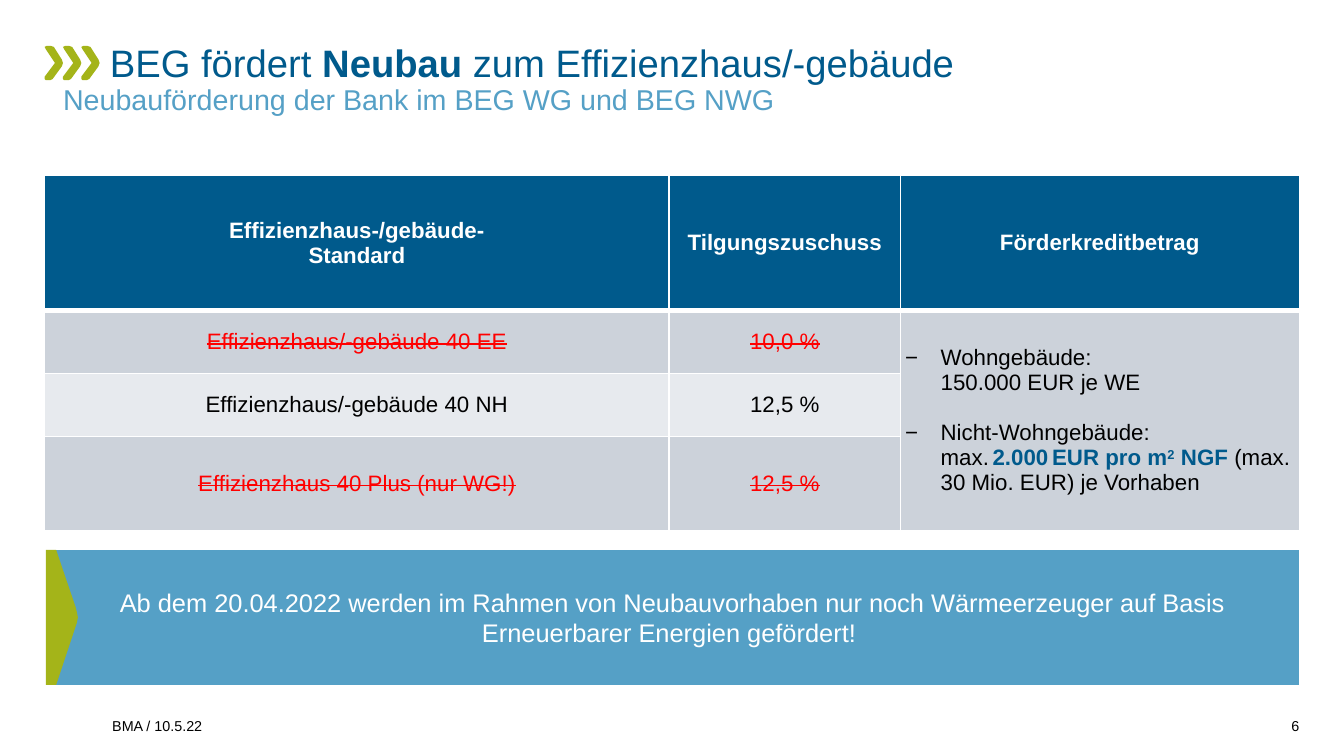
from lxml import etree
from pptx import Presentation
from pptx.dml.color import RGBColor
from pptx.enum.text import MSO_ANCHOR, PP_ALIGN
from pptx.oxml.ns import qn
from pptx.util import Inches, Pt

LEFT, CENTER, RIGHT = PP_ALIGN.LEFT, PP_ALIGN.CENTER, PP_ALIGN.RIGHT
TOP, MIDDLE, BOTTOM = MSO_ANCHOR.TOP, MSO_ANCHOR.MIDDLE, MSO_ANCHOR.BOTTOM

COLORS = {"navy": "005A8C", "sky": "55A0C6", "lime": "A4B419", "white": "FFFFFF",
          "black": "000000", "red": "FF0000", "band": "CCD2DA", "pale": "E7EAEE"}
FONT = "Arial"

# Content: a paragraph is a list of (text, format) runs
TITLE = [("BEG fördert ", {}), ("Neubau ", {"bold": True}), ("zum Effizienzhaus/-gebäude", {})]
SUBTITLE = "Neubauförderung der Bank im BEG WG und BEG NWG"
HEADINGS = ["Effizienzhaus-/gebäude-\nStandard", "Tilgungszuschuss", "Förderkreditbetrag"]
STANDARDS = [  # standard, repayment grant, discontinued
    ("Effizienzhaus/-gebäude 40 EE", "10,0 %", True),
    ("Effizienzhaus/-gebäude 40 NH", "12,5 %", False),
    ("Effizienzhaus 40 Plus (nur WG!)", "12,5 %", True),
]
ACCENT = {"color": "navy", "bold": True}
THIN = {"size": 8}
LOANS = [
    [("Wohngebäude:\n150.000 EUR je WE", {})],
    [("Nicht-Wohngebäude:\nmax.", {}), (" ", THIN), ("2.000", ACCENT), (" ", THIN),
     ("EUR pro m", ACCENT), ("2", {**ACCENT, "raised": True}), (" NGF ", ACCENT),
     ("(max. 30 Mio. EUR) je Vorhaben", {})],
]
NOTICE = ("Ab dem 20.04.2022 werden im Rahmen von Neubauvorhaben nur noch Wärmeerzeuger "
          "auf Basis Erneuerbarer Energien gefördert! ")
FOOTER, PAGE = "BMA / 10.5.22", "6"

# Layout in inches
WIDTH, HEIGHT = 11.73, 6.6
MARGIN = 0.39
CONTENT_W = WIDTH - 2 * MARGIN
COLUMNS = [5.45, 2.02, 3.48]
ROWS = [1.18, 0.55, 0.55, 0.82]
TABLE_TOP, NOTICE_TOP, FOOTER_TOP = 1.53, 4.8, 6.13
HEAD_LEFT, HEAD_W = 0.55, 10.79
CHEVRON_STEP = 0.16

# Outlines in hundredths of an inch
CHEVRON = [(2, 0), (0, 1), (1, 3), (9, 15), (0, 27), (0, 29), (1, 30), (5, 30),
           (7, 29), (15, 18), (16, 15), (15, 12), (8, 1), (5, 0)]
NOTICE_BOX = [(0, 0), (1094, 0), (1094, 118), (0, 118)]
NOTICE_TIP = [(0, 0), (9, 0), (26, 50), (27, 54), (28, 59), (27, 64), (26, 67),
              (9, 118), (0, 118)]


def rgb(name):
    return RGBColor.from_string(COLORS[name])


def put_text(frame, content, size=14, color="black", bold=False, strike=False, align=LEFT,
             spacing=None, gap=0, first_indent=0, hanging=0, bullet=None):
    """Fill a frame with a string or with paragraphs made of formatted runs."""
    paragraphs = [[(content, {})]] if isinstance(content, str) else content
    for number, runs in enumerate(paragraphs):
        para = frame.add_paragraph() if number else frame.paragraphs[0]
        para.alignment = align
        if spacing:
            para.line_spacing = spacing
        if number and gap:
            para.space_before = Pt(gap)
        props = para._p.get_or_add_pPr()
        if first_indent or hanging:
            props.set("marL", str(Inches(hanging)))
            props.set("indent", str(Inches(first_indent - hanging)))
        if bullet:
            etree.SubElement(props, qn("a:buFont")).set("typeface", FONT)
            etree.SubElement(props, qn("a:buChar")).set("char", bullet)
        for text, own in runs:
            for line_number, line in enumerate(text.split("\n")):
                if line_number:
                    para.add_line_break()
                run = para.add_run()
                run.text = line
                font = run.font
                font.name = FONT
                font.size = Pt(own.get("size", size))
                font.bold = own.get("bold", bold)
                font.color.rgb = rgb(own.get("color", color))
                run_props = run._r.get_or_add_rPr()
                if strike:
                    run_props.set("strike", "sngStrike")
                if own.get("raised"):
                    run_props.set("baseline", "30000")


def set_frame(frame, anchor, across=0, down=0):
    frame.word_wrap = True
    frame.vertical_anchor = anchor
    frame.margin_left = frame.margin_right = Inches(across)
    frame.margin_top = frame.margin_bottom = Inches(down)


def add_text(slide, content, left, top, width, height, anchor=TOP, **fmt):
    box = slide.shapes.add_textbox(*map(Inches, (left, top, width, height)))
    set_frame(box.text_frame, anchor)
    put_text(box.text_frame, content, **fmt)


def add_outline(slide, points, left, top, color):
    builder = slide.shapes.build_freeform(*points[0], scale=Inches(0.01))
    builder.add_line_segments(points[1:], close=True)
    shape = builder.convert_to_shape(Inches(left), Inches(top))
    shape.shadow.inherit = False
    shape.fill.solid()
    shape.fill.fore_color.rgb = rgb(color)
    shape.line.fill.background()
    return shape


def style_cell(cell, fill, edges):
    """Draw white edges given as {side: points}, then fill the cell."""
    props = cell._tc.get_or_add_tcPr()
    for side, points in edges.items():
        edge = etree.SubElement(props, qn(f"a:ln{side}"), w=str(Pt(points)))
        paint = etree.SubElement(edge, qn("a:solidFill"))
        etree.SubElement(paint, qn("a:srgbClr"), val=COLORS["white"])
    cell.fill.solid()
    cell.fill.fore_color.rgb = rgb(fill)
    cell.vertical_anchor = MIDDLE
    cell.margin_left = cell.margin_right = Inches(0.04)
    cell.margin_top = cell.margin_bottom = Inches(0.02)


def add_funding_table(slide):
    table = slide.shapes.add_table(len(ROWS), len(COLUMNS), Inches(MARGIN), Inches(TABLE_TOP),
                                   Inches(sum(COLUMNS)), Inches(sum(ROWS))).table
    for column, width in zip(table.columns, COLUMNS):
        column.width = Inches(width)
    for row, height in zip(table.rows, ROWS):
        row.height = Inches(height)
    for r in range(len(ROWS)):
        fill = "navy" if r == 0 else "band" if r % 2 else "pale"
        edges = {"L": 1, "R": 1, "T": 3 if r == 1 else 1, "B": 1 if r else 3}
        for c in range(len(COLUMNS)):
            style_cell(table.cell(r, c), fill, edges)

    for c, heading in enumerate(HEADINGS):
        put_text(table.cell(0, c).text_frame, heading, color="white", bold=True, align=CENTER)
    for r, (standard, grant, discontinued) in enumerate(STANDARDS, 1):
        for c, entry in enumerate((standard, grant)):
            put_text(table.cell(r, c).text_frame, entry, align=CENTER, strike=discontinued,
                     color="red" if discontinued else "black")
    loan_cell = table.cell(1, 2)
    loan_cell.merge(table.cell(len(STANDARDS), 2))
    put_text(loan_cell.text_frame, LOANS, gap=16, hanging=0.31, bullet="−")


def main():
    prs = Presentation()
    prs.slide_width, prs.slide_height = Inches(WIDTH), Inches(HEIGHT)
    slide = prs.slides.add_slide(prs.slide_layouts[6])

    # Heading with its chevrons
    for i in range(3):
        add_outline(slide, CHEVRON, MARGIN + i * CHEVRON_STEP, 0.4, "lime")
    add_text(slide, SUBTITLE, HEAD_LEFT, 0.74, HEAD_W, 0.36, size=18, color="sky", spacing=0.95)
    add_text(slide, [TITLE], HEAD_LEFT, 0.37, HEAD_W, 0.41, size=24, color="navy",
             spacing=0.95, first_indent=0.41)

    add_funding_table(slide)

    # Notice
    notice = add_outline(slide, NOTICE_BOX, MARGIN + 0.01, NOTICE_TOP, "sky")
    set_frame(notice.text_frame, MIDDLE, across=0.39, down=0.12)
    put_text(notice.text_frame, NOTICE, size=16, color="white", align=CENTER)
    add_outline(slide, NOTICE_TIP, MARGIN + 0.01, NOTICE_TOP, "lime")

    # Footer
    add_text(slide, FOOTER, 0.98, FOOTER_TOP, 9.9, 0.28, anchor=BOTTOM, size=9)
    add_text(slide, PAGE, MARGIN + CONTENT_W - 0.41, FOOTER_TOP, 0.41, 0.28, anchor=BOTTOM,
             size=9, align=RIGHT)

    prs.save("out.pptx")


if __name__ == "__main__":
    main()
